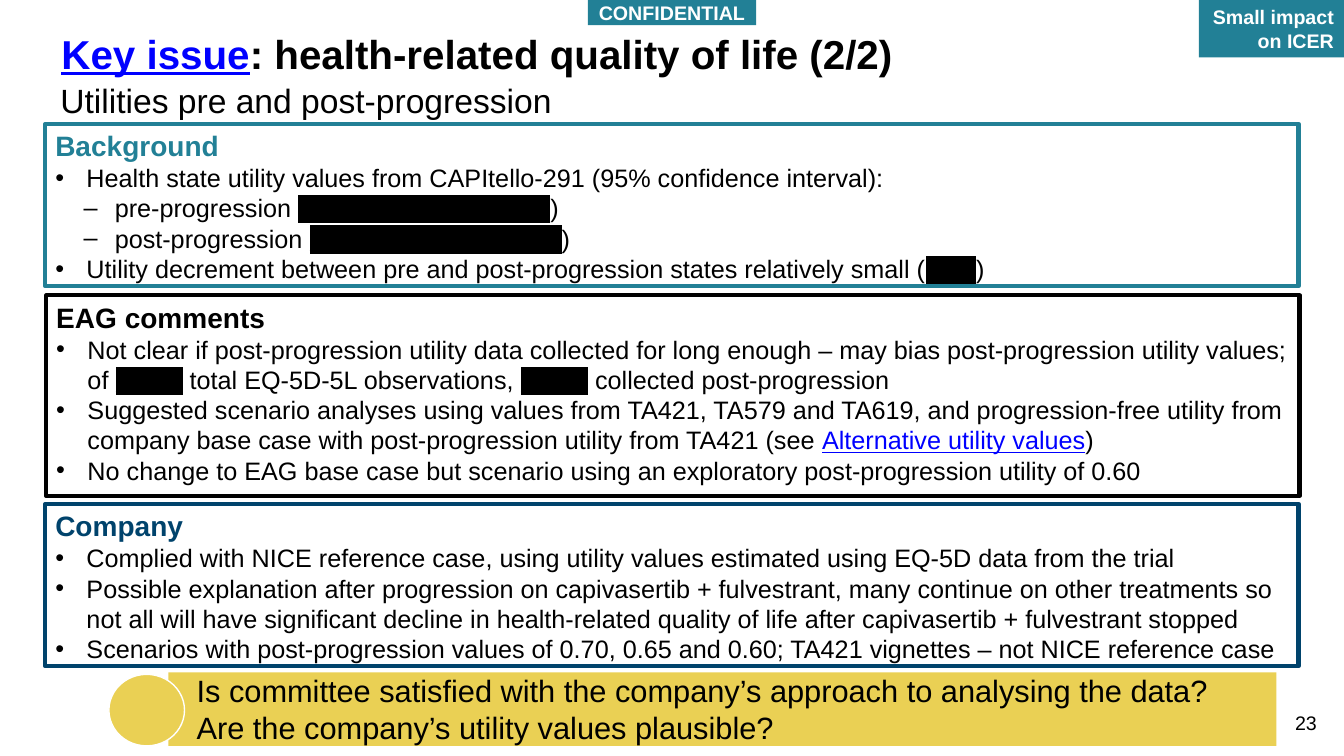
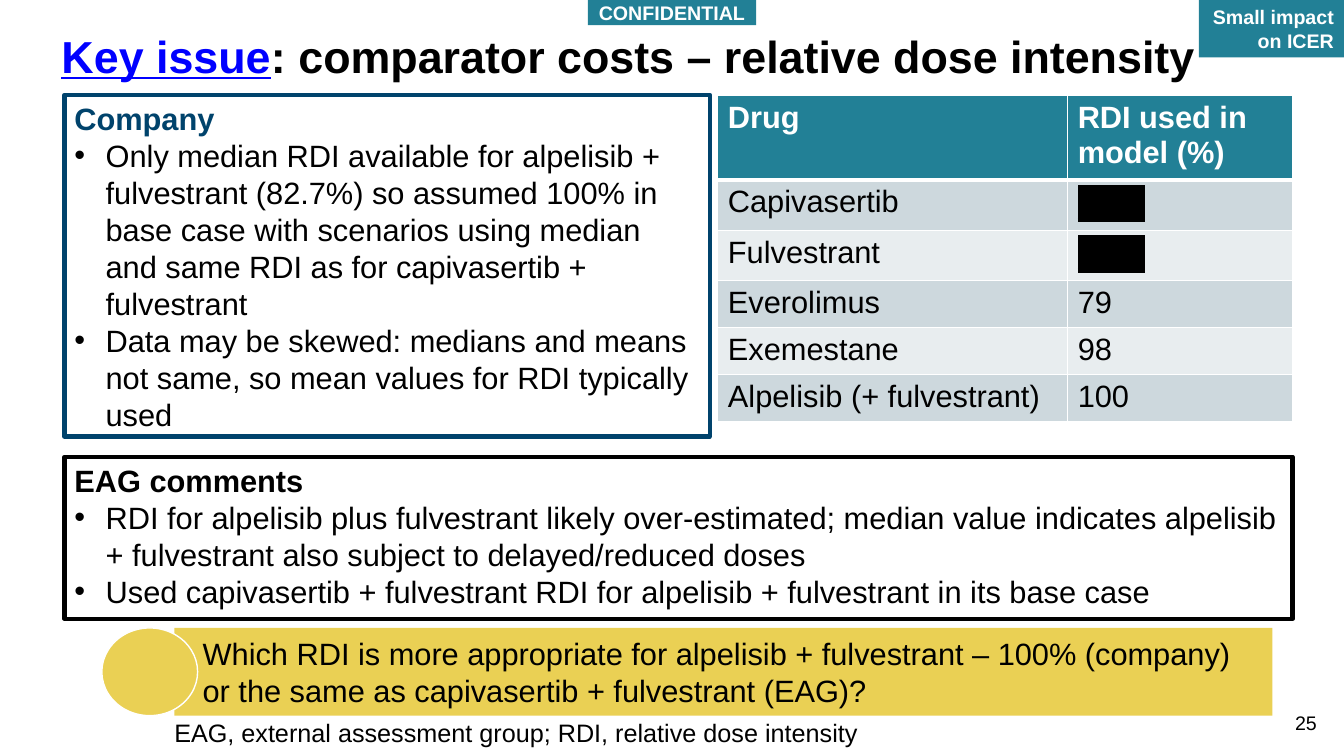
from lxml.etree import SubElement
from pptx import Presentation
from pptx.dml.color import RGBColor
from pptx.enum.shapes import MSO_SHAPE
from pptx.enum.text import MSO_ANCHOR, MSO_AUTO_SIZE, PP_ALIGN
from pptx.oxml import parse_xml
from pptx.oxml.ns import nsdecls, qn
from pptx.util import Inches, Pt

FONT = "Arial"
TEAL, NAVY, YELLOW = "228096", "00436C", "EAD054"
BLACK, WHITE, LINK = "000000", "FFFFFF", "0000FF"
ROW_FILLS = ("CDD8DD", "E8EDEF")


def link(text):
    return (text, "link")


def redacted(length):
    return ("X" * length, "redacted")


# A paragraph is a string or a list of runs; a bullet is (level, paragraph).
UTILITIES = {
    "number": "23",
    "title": [link("Key issue"), ": health-related quality of life (2/2)"],
    "title_size": 28.8,
    "subtitle": "Utilities pre and post-progression",
    "sizes": (20, 18),
    "panels": [
        ("Background", TEAL, (0.45, 1.23, 12.43, 1.61), [
            (0, "Health state utility values from CAPItello-291 (95% confidence interval):"),
            (1, ["pre-progression ", redacted(15), ")"]),
            (1, ["post-progression ", redacted(15), ")"]),
            (0, ["Utility decrement between pre and post-progression states "
                 "relatively small (", redacted(3), ")"]),
        ]),
        ("EAG comments", BLACK, (0.46, 2.93, 12.43, 1.99), [
            (0, ["Not clear if post-progression utility data collected for long enough – "
                 "may bias post-progression utility values; of ", redacted(4),
                 " total EQ-5D-5L observations, ", redacted(4),
                 " collected post-progression"]),
            (0, ["Suggested scenario analyses using values from TA421, TA579 and TA619, "
                 "and progression-free utility from company base case with "
                 "post-progression utility from TA421 (see ",
                 link("Alternative utility values"), ")"]),
            (0, "No change to EAG base case but scenario using an exploratory "
                "post-progression utility of 0.60"),
        ]),
        ("Company", NAVY, (0.45, 5, 12.43, 1.61), [
            (0, "Complied with NICE reference case, using utility values estimated "
                "using EQ-5D data from the trial"),
            (0, "Possible explanation after progression on capivasertib + fulvestrant, "
                "many continue on other treatments so not all will have significant "
                "decline in health-related quality of life after capivasertib + "
                "fulvestrant stopped"),
            (0, "Scenarios with post-progression values of 0.70, 0.65 and 0.60; "
                "TA421 vignettes – not NICE reference case"),
        ]),
    ],
    "question": ["Is committee satisfied with the company’s approach to analysing the data?",
                 "Are the company’s utility values plausible?"],
    "question_bar": (1.67, 6.67, 10.99, 0.73),
    "question_disc": (1.08, 6.69, 0.75, 0.71),
}
DOSE_INTENSITY = {
    "number": "25",
    "title": [link("Key issue"), ": comparator costs – relative dose intensity"],
    "title_size": 32,
    "sizes": (22, 22),
    "panels": [
        ("Company", NAVY, (0.64, 0.94, 6.4, 3.39), [
            (0, "Only median RDI available for alpelisib + fulvestrant (82.7%) so "
                "assumed 100% in base case with scenarios using median and same RDI "
                "as for capivasertib + fulvestrant"),
            (0, "Data may be skewed: medians and means not same, so mean values for "
                "RDI typically used"),
        ]),
        ("EAG comments", BLACK, (0.64, 4.53, 12.18, 1.61), [
            (0, "RDI for alpelisib plus fulvestrant likely over-estimated; median value "
                "indicates alpelisib + fulvestrant also subject to delayed/reduced doses"),
            (0, "Used capivasertib + fulvestrant RDI for alpelisib + fulvestrant in its "
                "base case"),
        ]),
    ],
    "question": ["Which RDI is more appropriate for alpelisib + fulvestrant – 100% "
                 "(company) or the same as capivasertib + fulvestrant (EAG)?"],
    "question_bar": (1.73, 6.23, 10.89, 0.87),
    "question_disc": (1.01, 6.23, 0.95, 0.87),
    "footnote": "EAG, external assessment group; RDI, relative dose intensity",
    "drugs": [
        ("Drug", "RDI used in model (%)"),
        ("Capivasertib", [redacted(3)]),
        ("Fulvestrant", [redacted(3)]),
        ("Everolimus", "79"),
        ("Exemestane", "98"),
        ("Alpelisib (+ fulvestrant)", "100"),
    ],
}


def rgb(color):
    return RGBColor.from_string(color)


def inches(place):
    return [Inches(length) for length in place]


def add_runs(paragraph, content, size, color=BLACK, bold=False):
    for part in [content] if isinstance(content, str) else content:
        text, style = (part, "plain") if isinstance(part, str) else part
        run = paragraph.add_run()
        run.text = text
        font = run.font
        font.name, font.size, font.bold = FONT, Pt(size), bold
        font.underline = style != "plain"
        font.color.rgb = rgb(LINK if style == "link" else color)
        if style == "redacted":
            fill = run._r.get_or_add_rPr().find(qn("a:solidFill"))
            fill.addnext(parse_xml(f'<a:highlight {nsdecls("a")}>'
                                   f'<a:srgbClr val="{BLACK}"/></a:highlight>'))


def add_bullet(paragraph, level):
    paragraph.level = level
    properties = paragraph._p.get_or_add_pPr()
    properties.set("marL", str(Inches((0.31, 0.59)[level])))
    properties.set("indent", str(Inches(-0.31)))
    SubElement(properties, qn("a:buFont")).set("typeface", FONT)
    SubElement(properties, qn("a:buChar")).set("char", "•‒"[level])


def add_box(slide, place, fill=None, line=None, width=1,
            preset=MSO_SHAPE.RECTANGLE, anchor=MSO_ANCHOR.TOP):
    box = slide.shapes.add_shape(preset, *inches(place))
    box.shadow.inherit = False
    if fill:
        box.fill.solid()
        box.fill.fore_color.rgb = rgb(fill)
    else:
        box.fill.background()
    if line:
        box.line.color.rgb = rgb(line)
        box.line.width = Pt(width)
    else:
        box.line.fill.background()
    box.text_frame.word_wrap = True
    box.text_frame.vertical_anchor = anchor
    box.text_frame.paragraphs[0].alignment = PP_ALIGN.LEFT
    return box


def add_label(slide, place, text, size, align=PP_ALIGN.LEFT):
    frame = slide.shapes.add_textbox(*inches(place)).text_frame
    frame.word_wrap = True
    frame.paragraphs[0].alignment = align
    add_runs(frame.paragraphs[0], text, size)


def add_band(slide, place, text, align, anchor):
    band = add_box(slide, place, TEAL, anchor=anchor)
    paragraph = band.text_frame.paragraphs[0]
    paragraph.alignment = align
    add_runs(paragraph, text, 14, WHITE, True)


def add_title(slide, content, size):
    title = slide.shapes.title
    title.left, title.top, title.width, title.height = inches((0.51, 0.29, 12.3, 0.65))
    frame = title.text_frame
    frame.auto_size = MSO_AUTO_SIZE.NONE
    frame.vertical_anchor = MSO_ANCHOR.TOP
    paragraph = frame.paragraphs[0]
    paragraph.alignment, paragraph.line_spacing = PP_ALIGN.LEFT, 0.9
    add_runs(paragraph, content, size, bold=True)


def add_panel(slide, heading, color, place, bullets, sizes):
    frame = add_box(slide, place, line=color, width=3).text_frame
    add_runs(frame.paragraphs[0], heading, sizes[0], color, True)
    for level, content in bullets:
        paragraph = frame.add_paragraph()
        paragraph.alignment = PP_ALIGN.LEFT
        add_bullet(paragraph, level)
        add_runs(paragraph, content, sizes[1])


def add_question(slide, lines, bar_place, disc_place):
    bar = add_box(slide, bar_place, YELLOW, anchor=MSO_ANCHOR.MIDDLE)
    frame = bar.text_frame
    frame.margin_left = Inches(0.28)
    for index, text in enumerate(lines):
        paragraph = frame.add_paragraph() if index else frame.paragraphs[0]
        paragraph.alignment = PP_ALIGN.LEFT
        add_runs(paragraph, text, 22)
    add_box(slide, disc_place, YELLOW, WHITE, preset=MSO_SHAPE.OVAL)


def add_borders(cell, bottom):
    properties = cell._tc.get_or_add_tcPr()
    for side, width in (("L", 1), ("R", 1), ("T", 1), ("B", bottom)):
        properties.append(parse_xml(
            f'<a:ln{side} {nsdecls("a")} w="{Pt(width)}"><a:solidFill>'
            f'<a:srgbClr val="{WHITE}"/></a:solidFill></a:ln{side}>'))


def add_drug_table(slide, drugs):
    table = slide.shapes.add_table(len(drugs), 2, *inches((7.12, 0.95, 5.7, 3.11))).table
    for column, width in zip(table.columns, (3.47, 2.23)):
        column.width = Inches(width)
    for index, values in enumerate(drugs):
        header = index == 0
        table.rows[index].height = Inches(0.81 if header else 0.46)
        for column, content in enumerate(values):
            cell = table.cell(index, column)
            # The header, and the row it touches, share one thick rule.
            add_borders(cell, 3 if header else 1)
            cell.fill.solid()
            cell.fill.fore_color.rgb = rgb(TEAL if header else ROW_FILLS[(index - 1) % 2])
            add_runs(cell.text_frame.paragraphs[0], content,
                     22 if isinstance(content, str) else 24,
                     WHITE if header else BLACK, header)


def build_slide(deck, topic):
    slide = deck.slides.add_slide(deck.slide_layouts[5])
    add_label(slide, (12.45, 7, 0.71, 0.4), topic["number"], 14, PP_ALIGN.RIGHT)
    add_band(slide, (5.83, 0, 1.67, 0.25), "CONFIDENTIAL",
             PP_ALIGN.CENTER, MSO_ANCHOR.MIDDLE)
    add_title(slide, topic["title"], topic["title_size"])
    if "subtitle" in topic:
        add_label(slide, (0.5, 0.74, 9.86, 0.5), topic["subtitle"], 24)
    for panel in topic["panels"]:
        add_panel(slide, *panel, topic["sizes"])
    if "drugs" in topic:
        add_drug_table(slide, topic["drugs"])
    add_question(slide, topic["question"], topic["question_bar"], topic["question_disc"])
    if "footnote" in topic:
        add_label(slide, (1.63, 7.07, 11.08, 0.4), topic["footnote"], 18)
    add_band(slide, (11.89, 0, 1.44, 0.57), "Small impact on ICER",
             PP_ALIGN.RIGHT, MSO_ANCHOR.TOP)


def main():
    deck = Presentation()
    deck.slide_width, deck.slide_height = inches((13.33, 7.5))
    for topic in (UTILITIES, DOSE_INTENSITY):
        build_slide(deck, topic)
    deck.save("out.pptx")


if __name__ == "__main__":
    main()
